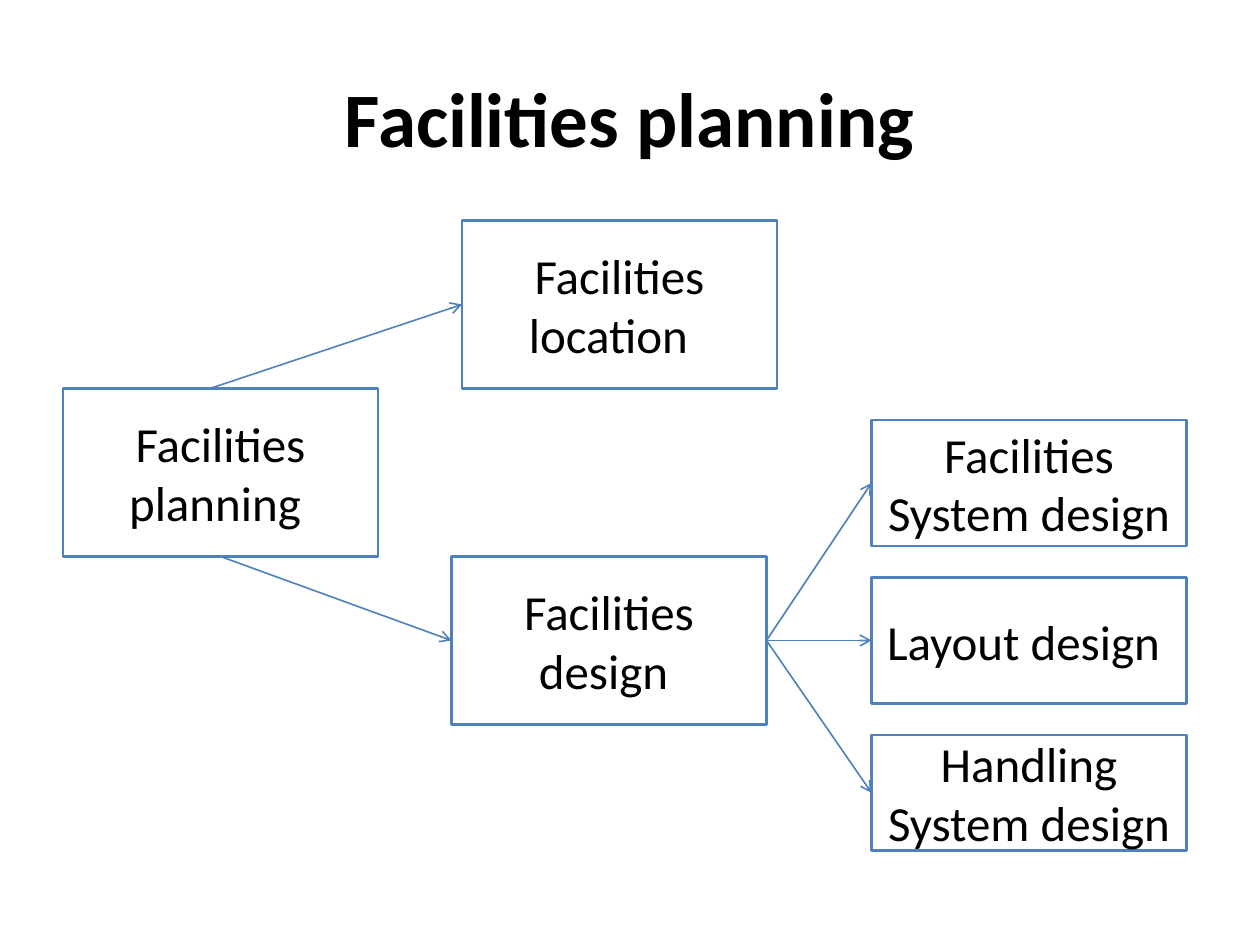
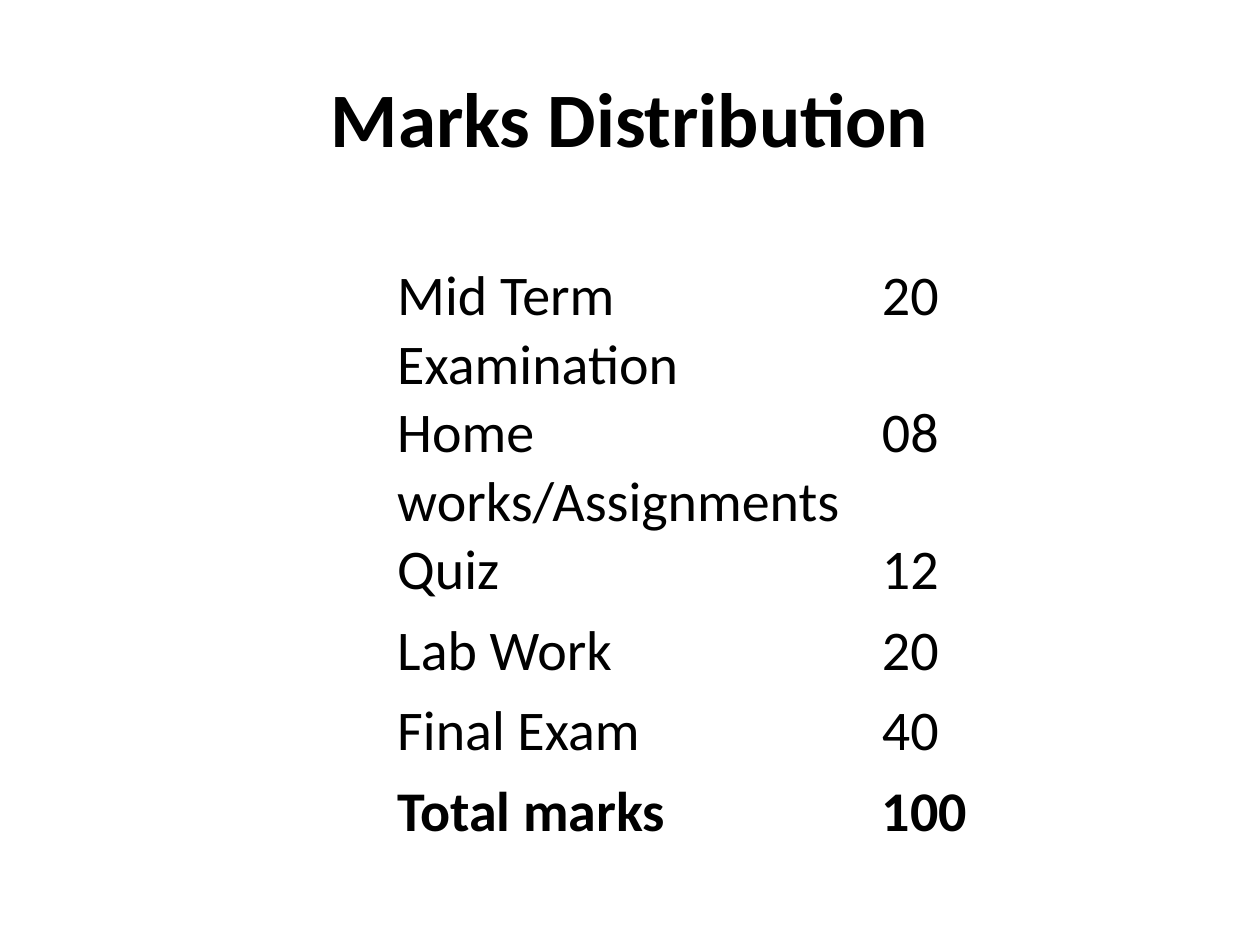
from pptx import Presentation
from pptx import util as u
from pptx.dml.color import RGBColor
from pptx.enum import shapes, text
from pptx.oxml import ns, xmlchemy

Pt = u.Pt

# Shared style
BLACK = RGBColor(0x00, 0x00, 0x00)
WHITE = RGBColor(0xFF, 0xFF, 0xFF)
BLUE = RGBColor(0x4F, 0x81, 0xBD)
FONT = "Calibri"
TITLE_BOX = (36, 21.6, 648, 90)
TOP, LEFT, BOTTOM, RIGHT = range(4)

# Diagram nodes: label and left, top, width, height inside the diagram
NODES = {
    "planning": ("Facilities planning ", 0, 96, 180, 96),
    "location": ("Facilities location  ", 228, 0, 180, 96),
    "design": ("Facilities design ", 222, 192, 180, 96),
    "system": ("Facilities System design ", 462, 114, 180, 72),
    "layout": ("Layout design ", 462, 204, 180, 72),
    "handling": ("Handling System design ", 462, 294, 180, 66),
}
MARKS = [
    ("Mid Term Examination", "20"),
    ("Home works/Assignments", "08"),
    ("Quiz", "12"),
    ("Lab Work", "20"),
    ("Final Exam", "40"),
    ("Total marks", "100"),
]


def style_text(paragraph, size, bold=False):
    for run in paragraph.runs:
        run.font.name = FONT
        run.font.size = Pt(size)
        run.font.bold = bold
        run.font.color.rgb = BLACK


def add_titled_slide(prs, heading):
    slide = prs.slides.add_slide(prs.slide_layouts[5])
    title = slide.shapes.title
    title.left, title.top, title.width, title.height = map(Pt, TITLE_BOX)
    frame = title.text_frame
    frame.text = heading
    frame.vertical_anchor = text.MSO_ANCHOR.MIDDLE
    frame.paragraphs[0].alignment = text.PP_ALIGN.CENTER
    style_text(frame.paragraphs[0], 44, bold=True)
    return slide


def add_node(slide, label, left, top, width, height):
    node = slide.shapes.add_shape(shapes.MSO_SHAPE.RECTANGLE,
                                  Pt(left), Pt(top), Pt(width), Pt(height))
    node.shadow.inherit = False
    node.fill.solid()
    node.fill.fore_color.rgb = WHITE
    node.line.color.rgb = BLUE
    node.line.width = Pt(1.5)
    frame = node.text_frame
    frame.word_wrap = True
    frame.text = label
    frame.vertical_anchor = text.MSO_ANCHOR.MIDDLE
    frame.paragraphs[0].alignment = text.PP_ALIGN.CENTER
    style_text(frame.paragraphs[0], 28)
    return node


def add_arrow(slide, target, source=None, side=RIGHT, start=(0, 0)):
    """Arrow to the left side of target, from a side of source or a point."""
    x, y = map(Pt, start)
    arrow = slide.shapes.add_connector(shapes.MSO_CONNECTOR.STRAIGHT, x, y, x, y)
    if source is not None:
        arrow.begin_connect(source, side)
    arrow.end_connect(target, LEFT)
    arrow.line.color.rgb = BLUE
    arrow.line.width = Pt(0.94)
    line = arrow.line._get_or_add_ln()
    line.append(xmlchemy.OxmlElement("a:tailEnd"))
    line.find(ns.qn("a:tailEnd")).set("type", "arrow")
    arrow._element.spPr.append(xmlchemy.OxmlElement("a:effectLst"))


def add_planning_diagram(slide, left, top):
    nodes = {key: add_node(slide, label, left + x, top + y, width, height)
             for key, (label, x, y, width, height) in NODES.items()}
    # The first arrow leaves the top edge just left of its middle
    add_arrow(slide, nodes["location"], start=(left + 84, top + 96))
    add_arrow(slide, nodes["design"], nodes["planning"], BOTTOM)
    for part in ("system", "layout", "handling"):
        add_arrow(slide, nodes[part], nodes["design"])


def add_marks_table(slide, left, top, widths, row_height):
    table = slide.shapes.add_table(
        len(MARKS), len(widths), Pt(left), Pt(top),
        Pt(sum(widths)), Pt(row_height * len(MARKS))).table
    table.first_row = table.horz_banding = False
    for column, width in zip(table.columns, widths):
        column.width = Pt(width)
    for r, entry in enumerate(MARKS):
        for c, value in enumerate(entry):
            cell = table.cell(r, c)
            cell.fill.background()
            cell.margin_left = cell.margin_right = Pt(5)
            cell.margin_top = cell.margin_bottom = 0
            cell.text_frame.text = value
            style_text(cell.text_frame.paragraphs[0], 32,
                       bold=r == len(MARKS) - 1)


def main():
    prs = Presentation()
    prs.slide_width, prs.slide_height = Pt(720), Pt(540)

    planning_slide = add_titled_slide(prs, "Facilities planning")
    add_planning_diagram(planning_slide, 36, 126)

    marks_slide = add_titled_slide(prs, "Marks Distribution")
    add_marks_table(marks_slide, 222, 150, (277, 125), 46)

    prs.save("out.pptx")


if __name__ == "__main__":
    main()
